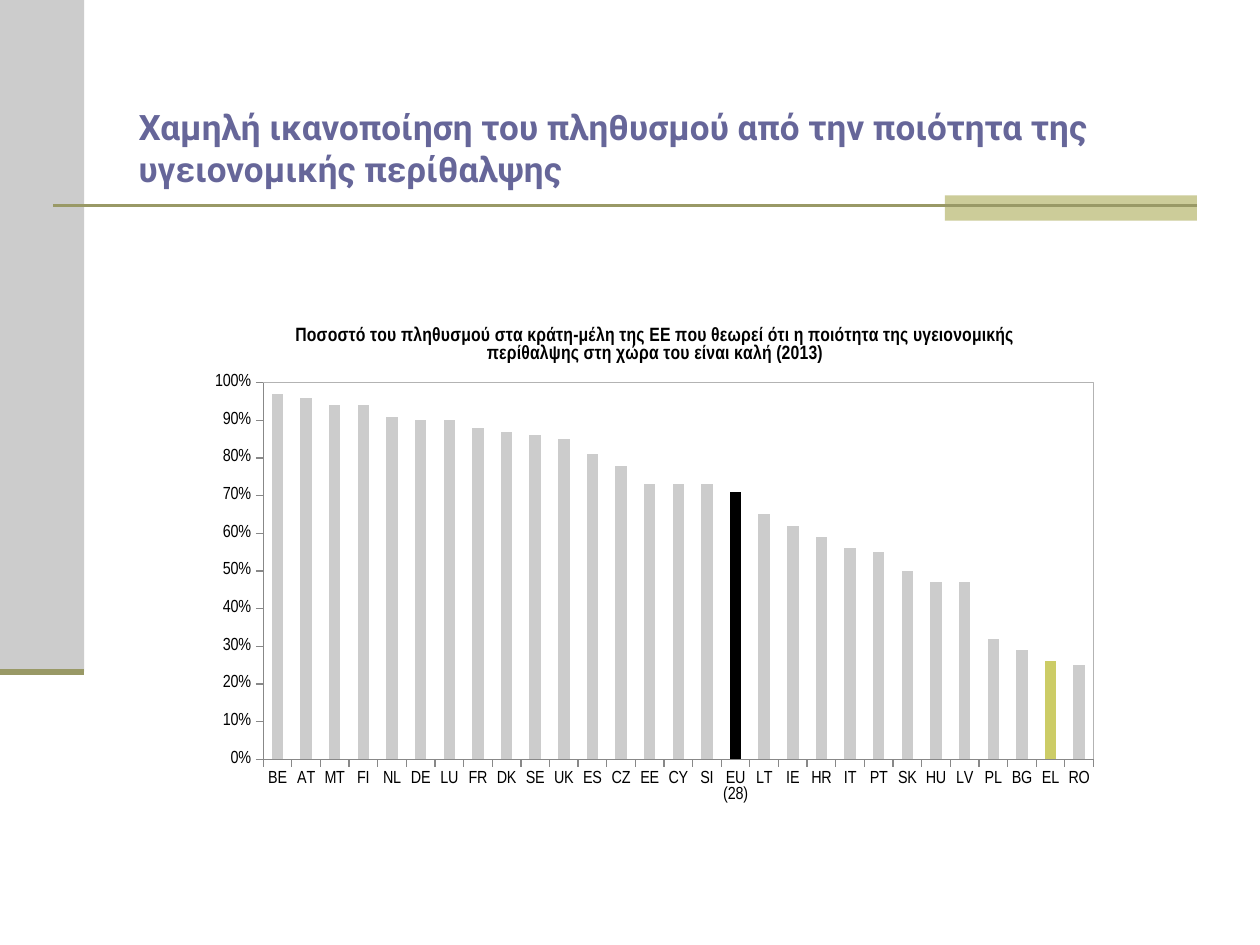
from lxml.etree import SubElement
from pptx import Presentation
from pptx.chart.data import CategoryChartData
from pptx.dml.color import RGBColor
from pptx.enum.chart import XL_CHART_TYPE, XL_TICK_MARK
from pptx.enum.shapes import MSO_CONNECTOR, MSO_SHAPE
from pptx.enum.text import MSO_ANCHOR, PP_ALIGN
from pptx.oxml import parse_xml
from pptx.oxml.ns import nsdecls, qn
from pptx.util import Cm, Pt

TITLE = "Χαμηλή ικανοποίηση του πληθυσμού από την ποιότητα της υγειονομικής περίθαλψης"
CHART_TITLE = ("Ποσοστό του πληθυσμού στα κράτη-μέλη της ΕΕ που θεωρεί ότι η ποιότητα "
               "της υγειονομικής περίθαλψης στη χώρα του είναι καλή (2013)")
SATISFACTION = {
    "BE": 97, "AT": 96, "MT": 94, "FI": 94, "NL": 91, "DE": 90, "LU": 90, "FR": 88,
    "DK": 87, "SE": 86, "UK": 85, "ES": 81, "CZ": 78, "EE": 73, "CY": 73, "SI": 73,
    "EU (28)": 71, "LT": 65, "IE": 62, "HR": 59, "IT": 56, "PT": 55, "SK": 50,
    "HU": 47, "LV": 47, "PL": 32, "BG": 29, "EL": 26, "RO": 25,
}
COLORS = {"grey": "CCCCCC", "sand": "CCCC99", "olive": "999966", "title": "666699",
          "text": "000000", "axis": "888888", "frame": "B3B3B3", "greece": "CCCC66"}
HIGHLIGHTS = {"EU (28)": "text", "EL": "greece"}
BLOCKS = [(0, 0, 1.7, 13.54, "grey"), (19.05, 3.94, 5.08, 0.51, "sand")]
RULES = [(1.07, 4.14, 24.13, 4.14, 1.5), (0, 13.54, 1.7, 13.54, 3.5)]
PLOT = {"x": 0.084, "y": 0.147, "w": 0.881, "h": 0.7}


def rgb(name):
    return RGBColor.from_string(COLORS[name])


def set_font(font, name, size, color, bold):
    font.name, font.size, font.bold = name, Pt(size), bold
    font.color.rgb = rgb(color)


def add_block(s, x, y, w, h, color):
    sp = s.shapes.add_shape(MSO_SHAPE.RECTANGLE, Cm(x), Cm(y), Cm(w), Cm(h))
    sp.shadow.inherit = False
    sp.fill.solid()
    sp.fill.fore_color.rgb = rgb(color)
    sp.line.fill.background()


def add_rule(s, x1, y1, x2, y2, width):
    line = s.shapes.add_connector(MSO_CONNECTOR.STRAIGHT, Cm(x1), Cm(y1), Cm(x2), Cm(y2))
    line.line.color.rgb = rgb("olive")
    line.line.width = Pt(width)
    SubElement(line._element.spPr, qn("a:effectLst"))


def set_title(s):
    sp = s.shapes.title
    sp.left, sp.top, sp.width, sp.height = Cm(2.54), Cm(0.76), Cm(22.86), Cm(3.18)
    tf = sp.text_frame
    tf.text = TITLE
    tf.word_wrap = True
    tf.vertical_anchor = MSO_ANCHOR.BOTTOM
    p = tf.paragraphs[0]
    p.alignment = PP_ALIGN.LEFT
    set_font(p.runs[0].font, "Roboto", 20, "title", True)


def frame_plot(chart):
    area = chart._chartSpace.chart.plotArea
    for old in area.findall(qn("c:layout")):
        area.remove(old)
    modes = "".join(f'<c:{k}Mode val="edge"/>' for k in "xy")
    sizes = "".join(f'<c:{k} val="{v}"/>' for k, v in PLOT.items())
    area.insert(0, parse_xml(
        f'<c:layout {nsdecls("c")}><c:manualLayout><c:layoutTarget val="inner"/>'
        f'{modes}{sizes}</c:manualLayout></c:layout>'))
    area.append(parse_xml(
        f'<c:spPr {nsdecls("c", "a")}><a:noFill/><a:ln w="9525"><a:solidFill>'
        f'<a:srgbClr val="{COLORS["frame"]}"/></a:solidFill></a:ln></c:spPr>'))


def add_satisfaction_chart(s):
    data = CategoryChartData(number_format="0%")
    data.categories = list(SATISFACTION)
    data.add_series("Series 1", [v / 100 for v in SATISFACTION.values()])
    chart = s.shapes.add_chart(XL_CHART_TYPE.COLUMN_CLUSTERED, Cm(3.71), Cm(6.12),
                               Cm(19), Cm(10.85), data).chart
    set_font(chart.font, "Arial Narrow", 10, "text", False)
    chart.has_legend = False
    chart.has_title = True
    tf = chart.chart_title.text_frame
    tf.text = CHART_TITLE
    set_font(tf.paragraphs[0].runs[0].font, "Arial Narrow", 11, "text", True)
    chart.chart_title.include_in_layout = False

    for axis in (chart.category_axis, chart.value_axis):
        axis.has_major_gridlines = False
        axis.major_tick_mark = XL_TICK_MARK.OUTSIDE
        axis.minor_tick_mark = XL_TICK_MARK.NONE
        axis.format.line.color.rgb = rgb("axis")
        axis.format.line.width = Pt(0.75)
    axis = chart.value_axis
    axis.minimum_scale, axis.maximum_scale, axis.major_unit = 0, 1, 0.1
    axis.tick_labels.number_format = "0%"
    axis.tick_labels.number_format_is_linked = False

    plot = chart.plots[0]
    plot.gap_width = 150
    plot.vary_by_categories = False
    series = plot.series[0]
    series.format.fill.solid()
    series.format.fill.fore_color.rgb = rgb("grey")
    for i, country in enumerate(SATISFACTION):
        if country in HIGHLIGHTS:
            fill = series.points[i].format.fill
            fill.solid()
            fill.fore_color.rgb = rgb(HIGHLIGHTS[country])
    frame_plot(chart)


def main():
    prs = Presentation()
    prs.slide_width, prs.slide_height = Cm(25.4), Cm(19.05)
    s = prs.slides.add_slide(prs.slide_layouts[5])
    for block in BLOCKS:
        add_block(s, *block)
    for rule in RULES:
        add_rule(s, *rule)
    add_satisfaction_chart(s)
    set_title(s)
    prs.save("out.pptx")


if __name__ == "__main__":
    main()
